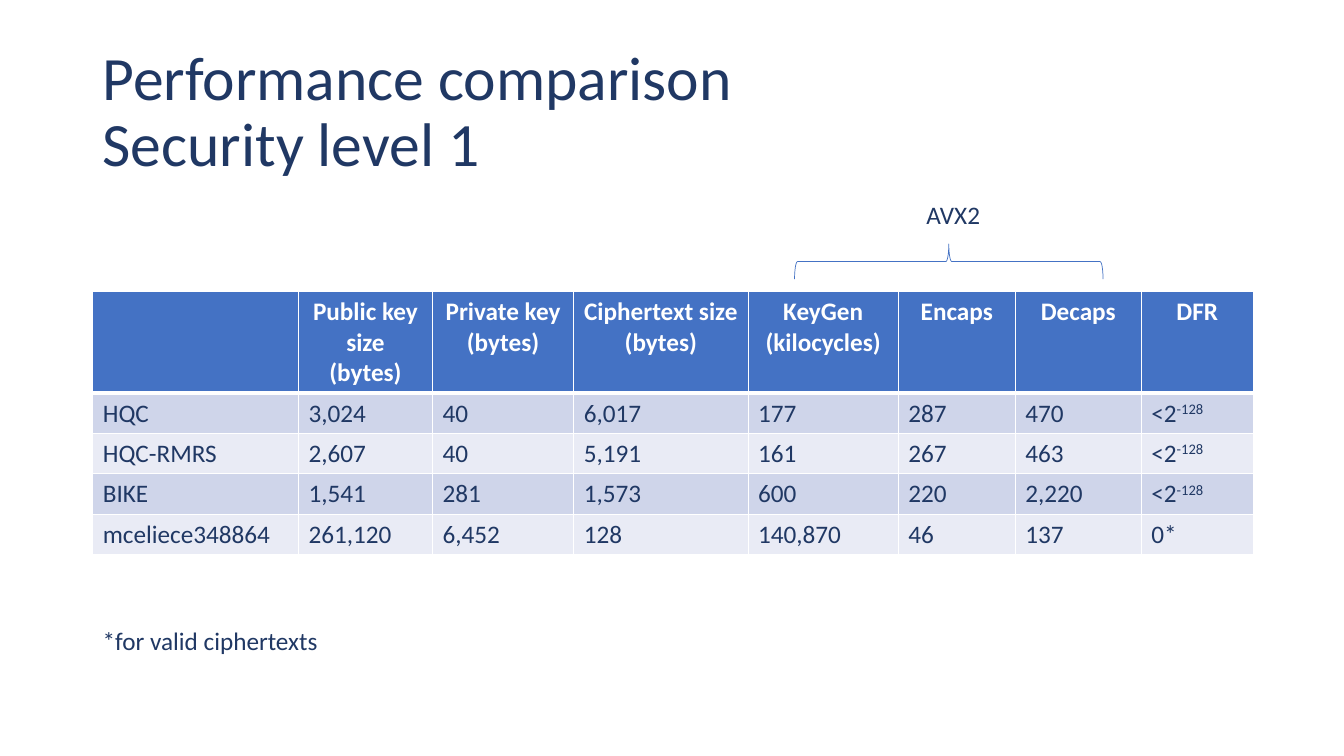
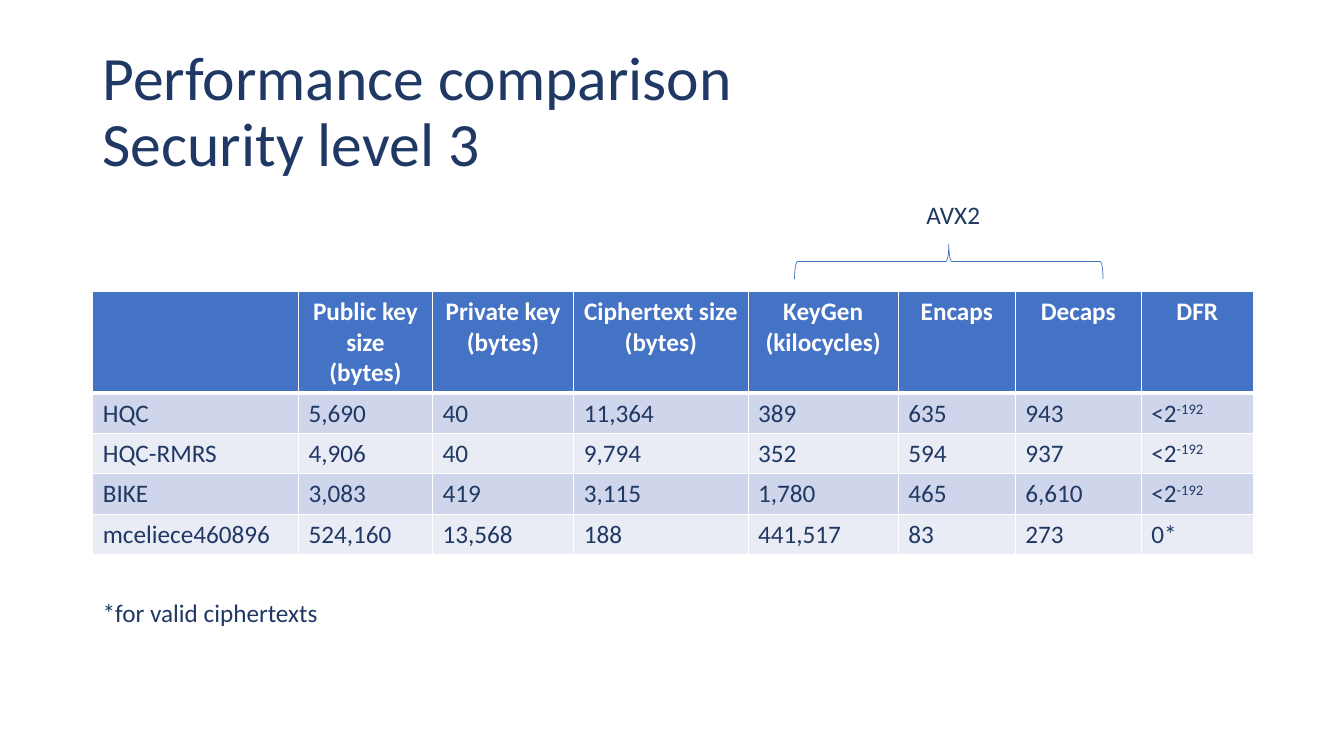
from lxml.etree import SubElement
from pptx import Presentation
from pptx.dml.color import RGBColor
from pptx.enum.shapes import MSO_SHAPE
from pptx.enum.text import MSO_ANCHOR, PP_ALIGN
from pptx.oxml import parse_xml
from pptx.oxml.ns import nsdecls, qn
from pptx.util import Inches, Pt

FONT = "Calibri"
NAVY, BLUE, WHITE = "203864", "4472C4", "FFFFFF"
BANDS = ("CFD5EA", "E9EBF5")
LEFT, WIDTH = 0.92, 11.5
TABLE_TOP = 2.89
HEADER_HEIGHT, ROW_HEIGHT = 1.01, 0.4
COLUMN_WIDTHS = (2.04, 1.33, 1.4, 1.73, 1.49, 1.16, 1.25, 1.11)
HEADERS = ("", "Public key size (bytes)", "Private key (bytes)",
           "Ciphertext size (bytes)", "KeyGen (kilocycles)",
           "Encaps", "Decaps", "DFR")
LEVELS = (
    {"level": 1, "note_top": 6.15, "rows": (
        ("HQC", "3,024", "40", "6,017", "177", "287", "470", "<2^-128"),
        ("HQC-RMRS", "2,607", "40", "5,191", "161", "267", "463", "<2^-128"),
        ("BIKE", "1,541", "281", "1,573", "600", "220", "2,220", "<2^-128"),
        ("mceliece348864", "261,120", "6,452", "128", "140,870", "46", "137", "0*"),
    )},
    {"level": 3, "note_top": 5.88, "rows": (
        ("HQC", "5,690", "40", "11,364", "389", "635", "943", "<2^-192"),
        ("HQC-RMRS", "4,906", "40", "9,794", "352", "594", "937", "<2^-192"),
        ("BIKE", "3,083", "419", "3,115", "1,780", "465", "6,610", "<2^-192"),
        ("mceliece460896", "524,160", "13,568", "188", "441,517", "83", "273", "0*"),
    )},
)


def color(value):
    """Turn a hex string into a colour."""
    return RGBColor.from_string(value)


def write(frame, text, size=18, ink=NAVY, bold=False, align=PP_ALIGN.LEFT, spacing=None):
    """Write text into a frame; a newline breaks the line and ^ starts a superscript."""
    para = frame.paragraphs[0]
    para.alignment = align
    para.line_spacing = spacing
    for number, line in enumerate(text.split("\n")):
        if number:
            para.add_line_break()
        base, _, exponent = line.partition("^")
        for part, baseline in ((base, None), (exponent, "30000")):
            if not part:
                continue
            span = para.add_run()
            span.text = part
            span.font.name = FONT
            span.font.size = Pt(size)
            span.font.bold = bold
            span.font.color.rgb = color(ink)
            if baseline:
                span.font._element.set("baseline", baseline)


def add_text(page, box, text, anchor=MSO_ANCHOR.TOP, **style):
    """Place a wrapped text box on the page."""
    frame = page.shapes.add_textbox(*map(Inches, box)).text_frame
    frame.word_wrap = True
    frame.vertical_anchor = anchor
    write(frame, text, **style)


def set_borders(cell, top=1, bottom=1):
    """Give a cell white borders, with top and bottom widths in points."""
    properties = cell._tc.get_or_add_tcPr()
    widths = {"lnL": 1, "lnR": 1, "lnT": top, "lnB": bottom}
    for position, (side, width) in enumerate(widths.items()):
        line = parse_xml(f'<a:{side} {nsdecls("a")} w="{Pt(width)}"/>')
        fill = SubElement(line, qn("a:solidFill"))
        SubElement(fill, qn("a:srgbClr")).set("val", WHITE)
        properties.insert(position, line)


def add_comparison(page, left, top, rows):
    """Build the table with a header row and banded rows."""
    lines = (HEADERS, *rows)
    height = HEADER_HEIGHT + ROW_HEIGHT * len(rows)
    box = map(Inches, (left, top, sum(COLUMN_WIDTHS), height))
    table = page.shapes.add_table(len(lines), len(HEADERS), *box).table
    for column, width in zip(table.columns, COLUMN_WIDTHS):
        column.width = Inches(width)
    for index, values in enumerate(lines):
        header = index == 0
        table.rows[index].height = Inches(HEADER_HEIGHT if header else ROW_HEIGHT)
        style = {"ink": WHITE, "bold": True, "align": PP_ALIGN.CENTER} if header else {}
        for cell, text in zip(table.rows[index].cells, values):
            cell.fill.solid()
            cell.fill.fore_color.rgb = color(BLUE if header else BANDS[(index - 1) % 2])
            set_borders(cell, top=3 if index == 1 else 1, bottom=3 if header else 1)
            write(cell.text_frame, text, **style)


def add_bracket(page, left, top, width, label):
    """Place a label above a brace that spans the given width."""
    depth, brace_top = 0.35, top + 0.49
    center, middle = left + width / 2, brace_top + depth / 2
    add_text(page, (center - 0.32, top, 0.82, 0.4), label)
    brace = page.shapes.add_shape(
        MSO_SHAPE.LEFT_BRACE, Inches(center - depth / 2), Inches(middle - width / 2),
        Inches(depth), Inches(width))
    brace.rotation = 90
    brace.shadow.inherit = False
    brace.fill.background()
    brace.line.color.rgb = color(BLUE)
    brace.line.width = Pt(0.5)


def add_level_slide(deck, level, note_top, rows):
    """Build one comparison slide for a security level."""
    page = deck.slides.add_slide(deck.slide_layouts[6])
    add_text(page, (LEFT, 0.4, WIDTH, 1.45), f"Performance comparison\nSecurity level {level}",
             anchor=MSO_ANCHOR.MIDDLE, size=44, spacing=0.9)
    add_comparison(page, LEFT, TABLE_TOP, rows)
    add_bracket(page, 7.88, 1.93, 3.06, "AVX2")
    add_text(page, (LEFT, note_top, 2.4, 0.4), "*for valid ciphertexts")


def main():
    """Build and save the deck."""
    deck = Presentation()
    deck.slide_width, deck.slide_height = Inches(13.33), Inches(7.5)
    for content in LEVELS:
        add_level_slide(deck, **content)
    deck.save("out.pptx")


if __name__ == "__main__":
    main()
